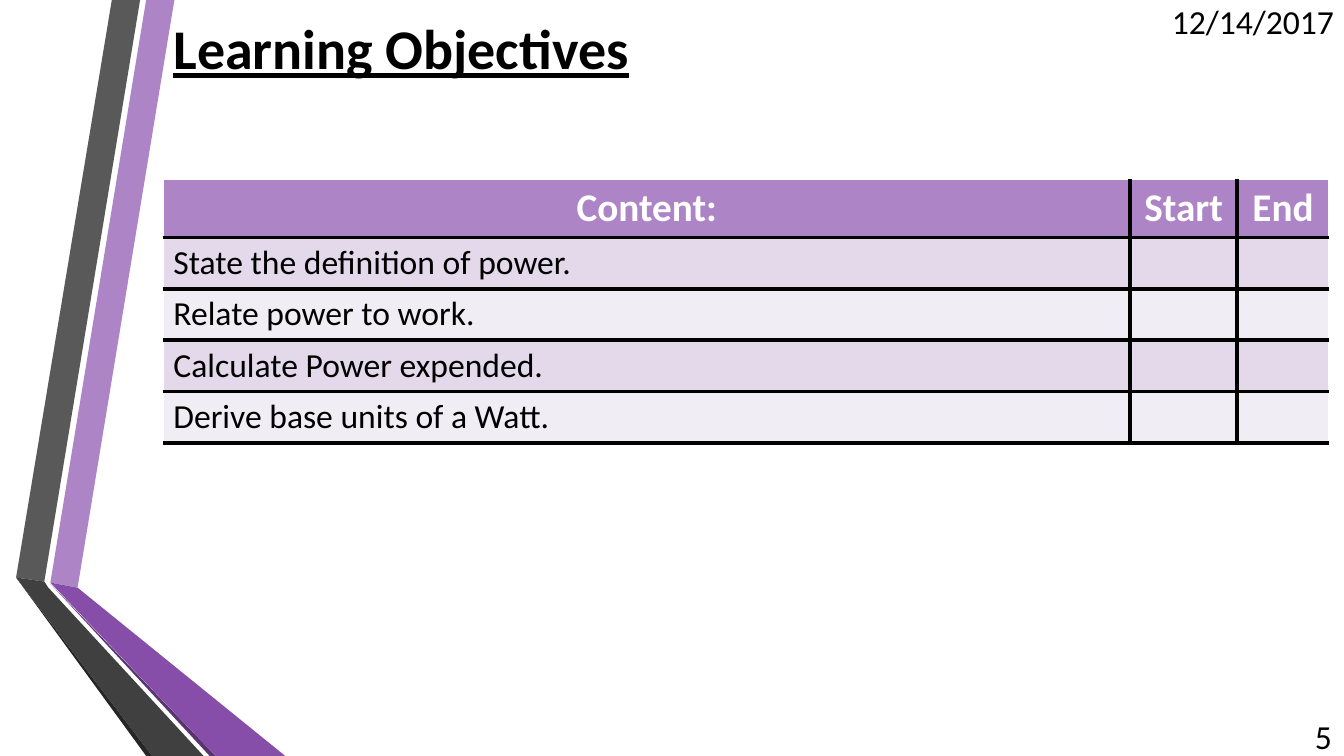
from dataclasses import dataclass

from lxml.etree import SubElement
from pptx import Presentation
from pptx.dml.color import RGBColor
from pptx.enum.text import MSO_ANCHOR, MSO_AUTO_SIZE, PP_ALIGN
from pptx.oxml.ns import qn
from pptx.slide import Slide
from pptx.table import _Cell
from pptx.text.text import TextFrame, _Paragraph
from pptx.util import Inches, Pt


@dataclass(frozen=True)
class Theme:
    font: str = "Calibri"
    title_size: int = 40
    header_size: int = 28
    body_size: int = 24
    border_width: int = 3
    black: str = "000000"
    white: str = "FFFFFF"
    header_fill: str = "AD84C6"
    band_fills: tuple[str, str] = ("E3D9EA", "F1EDF5")


@dataclass(frozen=True)
class Ribbon:
    color: str
    points: tuple[tuple[float, float], ...]


@dataclass(frozen=True)
class Label:
    text: str
    left: float
    top: float
    width: float
    height: float


THEME = Theme()
RIBBONS = (
    Ribbon("AD84C6", ((0.5, 5.78), (0.77, 5.83), (1.73, 0), (1.45, 0))),
    Ribbon("595959", ((1.39, 0), (1.11, 0), (0.16, 5.73), (0.44, 5.77))),
    Ribbon("262626", ((0.16, 5.73), (1.45, 7.5), (1.51, 7.5))),
    Ribbon("5A3471", ((0.5, 5.79), (2.08, 7.5), (2.14, 7.5))),
    Ribbon("874EA9", ((0.5, 5.78), (2.14, 7.5), (2.83, 7.5), (0.77, 5.83))),
    Ribbon("404040", ((2.02, 7.5), (0.48, 5.83), (0.44, 5.77), (0.16, 5.73), (1.51, 7.5))),
)
TITLE = Label("Learning Objectives", 1.62, 0.01, 10.96, 0.92)
CORNER_LABELS = (
    Label("12/14/2017", 11.29, 0.01, 2.04, 0.4),
    Label("5", 12.58, 7.1, 0.73, 0.4),
)
HEADERS = ("Content:", "Start", "End")
OBJECTIVES = (
    "State the definition of power.",
    "Relate power to work.",
    "Calculate Power expended.",
    "Derive base units of a Watt.",
)
COLUMN_WIDTHS = (9.59, 1.06, 0.91)
HEADER_HEIGHT = 0.57
ROW_HEIGHT = 0.51


def format_paragraph(paragraph: _Paragraph, size: int, color: str, align: PP_ALIGN,
                     bold: bool = False, underline: bool = False) -> None:
    """Apply alignment and run formatting to a paragraph."""
    paragraph.alignment = align
    for run in paragraph.runs:
        run.font.name = THEME.font
        run.font.size = Pt(size)
        run.font.bold = bold
        run.font.underline = underline
        run.font.color.rgb = RGBColor.from_string(color)


def fill_frame(text_frame: TextFrame, text: str) -> _Paragraph:
    """Put vertically centred text in a frame and return its paragraph."""
    text_frame.text = text
    text_frame.word_wrap = True
    text_frame.auto_size = MSO_AUTO_SIZE.NONE
    text_frame.vertical_anchor = MSO_ANCHOR.MIDDLE
    return text_frame.paragraphs[0]


def draw_ribbon(slide: Slide, ribbon: Ribbon) -> None:
    """Draw one filled polygon of the side decoration."""
    start, *others = [(Inches(x), Inches(y)) for x, y in ribbon.points]
    builder = slide.shapes.build_freeform(*start)
    builder.add_line_segments(others, close=True)
    shape = builder.convert_to_shape()
    shape.shadow.inherit = False
    shape.fill.solid()
    shape.fill.fore_color.rgb = RGBColor.from_string(ribbon.color)
    shape.line.fill.background()


def draw_title(slide: Slide, label: Label) -> None:
    """Place and format the title placeholder."""
    title = slide.shapes.title
    title.left, title.top = Inches(label.left), Inches(label.top)
    title.width, title.height = Inches(label.width), Inches(label.height)
    paragraph = fill_frame(title.text_frame, label.text)
    format_paragraph(paragraph, THEME.title_size, THEME.black, PP_ALIGN.LEFT, True, True)


def draw_corner_label(slide: Slide, label: Label) -> None:
    """Add a right-aligned text box."""
    box = slide.shapes.add_textbox(Inches(label.left), Inches(label.top),
                                   Inches(label.width), Inches(label.height))
    paragraph = fill_frame(box.text_frame, label.text)
    format_paragraph(paragraph, THEME.body_size, THEME.black, PP_ALIGN.RIGHT)


def style_cell(cell: _Cell, fill: str, sides: list[str]) -> None:
    """Give a cell its borders and fill."""
    properties = cell._tc.get_or_add_tcPr()
    for side in sides:
        line = SubElement(properties, qn(f"a:ln{side}"), w=str(Pt(THEME.border_width)))
        SubElement(SubElement(line, qn("a:solidFill")), qn("a:srgbClr"), val=THEME.black)
    cell.fill.solid()
    cell.fill.fore_color.rgb = RGBColor.from_string(fill)


def draw_table(slide: Slide) -> None:
    """Add the table of objectives with ruled inner edges."""
    rows = [HEADERS, *((objective, "", "") for objective in OBJECTIVES)]
    height = HEADER_HEIGHT + ROW_HEIGHT * len(OBJECTIVES)
    table = slide.shapes.add_table(len(rows), len(HEADERS), Inches(1.62), Inches(1.78),
                                   Inches(sum(COLUMN_WIDTHS)), Inches(height)).table
    for column, width in zip(table.columns, COLUMN_WIDTHS):
        column.width = Inches(width)
    for row_index, texts in enumerate(rows):
        is_header = row_index == 0
        table.rows[row_index].height = Inches(HEADER_HEIGHT if is_header else ROW_HEIGHT)
        fill = THEME.header_fill if is_header else THEME.band_fills[(row_index - 1) % 2]
        for column_index, text in enumerate(texts):
            edges = {"L": column_index > 0, "R": column_index < len(texts) - 1,
                     "T": not is_header, "B": True}
            cell = table.cell(row_index, column_index)
            style_cell(cell, fill, [side for side, ruled in edges.items() if ruled])
            cell.text_frame.text = text
            paragraph = cell.text_frame.paragraphs[0]
            if is_header:
                cell.vertical_anchor = MSO_ANCHOR.MIDDLE
                format_paragraph(paragraph, THEME.header_size, THEME.white, PP_ALIGN.CENTER, True)
            else:
                format_paragraph(paragraph, THEME.body_size, THEME.black, PP_ALIGN.LEFT)


def main() -> None:
    """Build and save the learning objectives slide."""
    presentation = Presentation()
    presentation.slide_width, presentation.slide_height = Inches(13.33), Inches(7.5)
    slide = presentation.slides.add_slide(presentation.slide_layouts.get_by_name("Title Only"))
    for ribbon in RIBBONS:
        draw_ribbon(slide, ribbon)
    draw_title(slide, TITLE)
    for label in CORNER_LABELS:
        draw_corner_label(slide, label)
    draw_table(slide)
    presentation.save("out.pptx")


if __name__ == "__main__":
    main()
